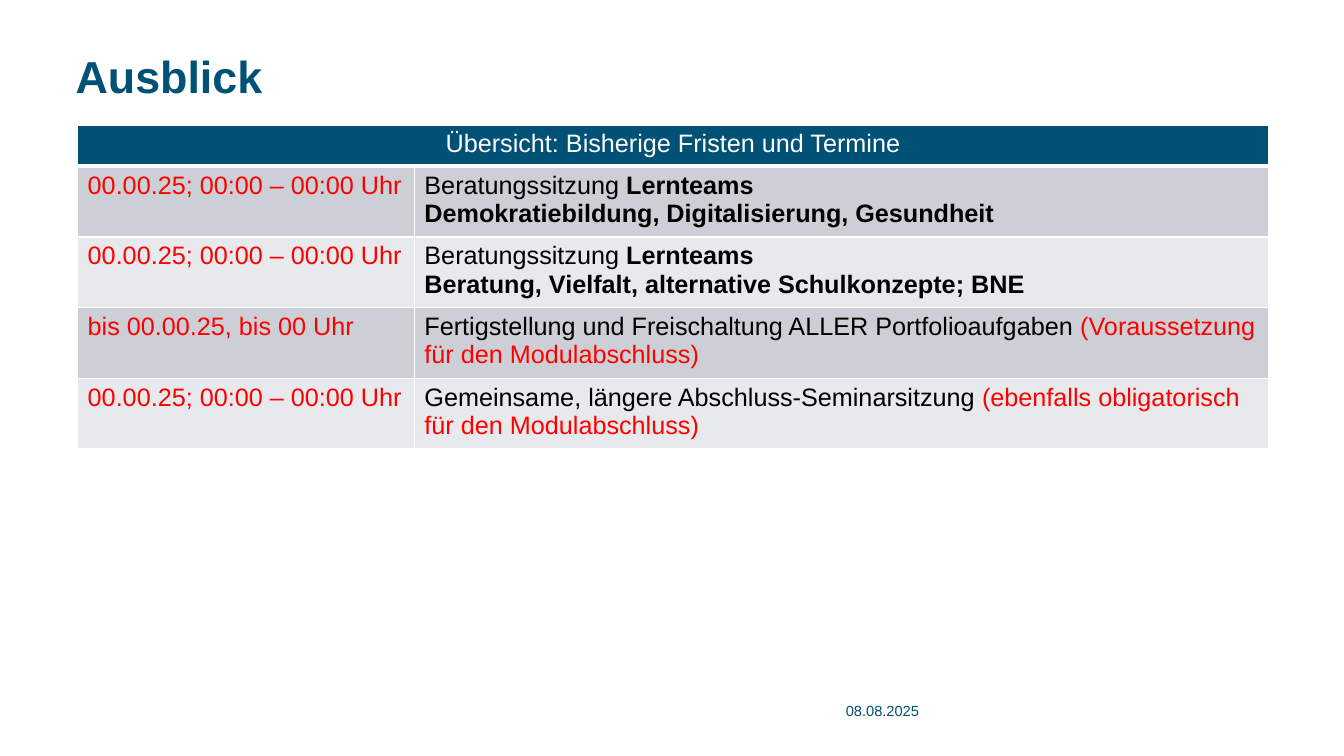
from dataclasses import dataclass

import pptx
import pptx.dml.color
import pptx.enum.text
import pptx.oxml.ns
import pptx.util
from lxml import etree

Inches = pptx.util.Inches
Align = pptx.enum.text.PP_ALIGN
Anchor = pptx.enum.text.MSO_ANCHOR


@dataclass(frozen=True)
class Theme:
    font: str = "Arial"
    blue: str = "005176"
    red: str = "FF0000"
    black: str = "000000"
    white: str = "FFFFFF"
    bands: tuple = ("CCD0D6", "E7E9EC")
    title: float = 32
    body: float = 18
    date: float = 10.5


THEME = Theme()
HEAD = "Übersicht: Bisherige Fristen und Termine"
SLOT = "00.00.25; 00:00 – 00:00 Uhr"
RED = {"color": THEME.red}
BOLD = {"bold": True}
# Each entry: date, then paragraphs made of (text, format) runs.
DATES = [
    (SLOT, [[("Beratungssitzung ", {}), ("Lernteams", BOLD)],
            [("Demokratiebildung, Digitalisierung, Gesundheit", BOLD)]]),
    (SLOT, [[("Beratungssitzung ", {}), ("Lernteams", BOLD)],
            [("Beratung, Vielfalt, alternative Schulkonzepte; BNE", BOLD)]]),
    ("bis 00.00.25, bis 00 Uhr",
     [[("Fertigstellung und Freischaltung ALLER Portfolioaufgaben ", {}),
       ("(Voraussetzung für den Modulabschluss)", RED)]]),
    (SLOT, [[("Gemeinsame, längere Abschluss-Seminarsitzung ", {}),
             ("(ebenfalls obligatorisch für den Modulabschluss)", RED)]]),
]


def rgb(code):
    return pptx.dml.color.RGBColor.from_string(code)


def write(para, text, size=THEME.body, color=THEME.black, bold=False):
    run = para.add_run()
    run.text = text
    run.font.name = THEME.font
    run.font.size = pptx.util.Pt(size)
    run.font.bold = bold
    run.font.color.rgb = rgb(color)


def label(slide, box, text, anchor=Anchor.TOP, line=None, **form):
    """Place one line of text in a box without margins."""
    frame = slide.shapes.add_textbox(*map(Inches, box)).text_frame
    frame.word_wrap = True
    frame.vertical_anchor = anchor
    frame.margin_left = frame.margin_right = 0
    frame.margin_top = frame.margin_bottom = 0
    para = frame.paragraphs[0]
    para.line_spacing = line
    write(para, text, **form)


def paint(cell, fill, base=1):
    """Give a cell white borders and a fill; base is the bottom width in points."""
    props = cell._tc.get_or_add_tcPr()
    name = pptx.oxml.ns.qn
    for side, width in (("L", 1), ("R", 1), ("T", 1), ("B", base)):
        edge = etree.SubElement(props, name("a:ln" + side),
                                w=str(pptx.util.Pt(width)))
        solid = etree.SubElement(edge, name("a:solidFill"))
        etree.SubElement(solid, name("a:srgbClr"), val=THEME.white)
    cell.fill.solid()
    cell.fill.fore_color.rgb = rgb(fill)


def fill_text(cell, paras):
    frame = cell.text_frame
    for index, runs in enumerate(paras):
        para = frame.add_paragraph() if index else frame.paragraphs[0]
        for text, form in runs:
            write(para, text, **form)


def plan(slide, box):
    """Draw the table of dates, its header spanning both columns."""
    left, top, width, height = box
    table = slide.shapes.add_table(len(DATES) + 1, 2, *map(Inches, box)).table
    first, head = 3.34, 0.41
    table.columns[0].width = Inches(first)
    table.columns[1].width = Inches(width - first)
    table.rows[0].height = Inches(head)
    for cell in table.rows[0].cells:
        paint(cell, THEME.blue, base=3)
    title = table.cell(0, 0)
    title.merge(table.cell(0, 1))
    fill_text(title, [[(HEAD, {"color": THEME.white})]])
    title.text_frame.paragraphs[0].alignment = Align.CENTER
    for row, (date, paras) in enumerate(DATES, 1):
        table.rows[row].height = Inches((height - head) / len(DATES))
        for col, content in enumerate(([[(date, RED)]], paras)):
            cell = table.cell(row, col)
            paint(cell, THEME.bands[(row - 1) % 2])
            fill_text(cell, content)


def main():
    deck = pptx.Presentation()
    deck.slide_width = Inches(13.33)
    deck.slide_height = Inches(7.5)
    slide = deck.slides.add_slide(deck.slide_layouts[6])
    label(slide, (0.75, 0.54, 11.98, 0.6), "Ausblick", line=0.9,
          size=THEME.title, color=THEME.blue, bold=True)
    plan(slide, (0.77, 1.24, 11.81, 3.05))
    label(slide, (8.39, 6.92, 1.34, 0.27), "08.08.2025", anchor=Anchor.MIDDLE,
          size=THEME.date, color=THEME.blue)
    deck.save("out.pptx")


if __name__ == "__main__":
    main()
